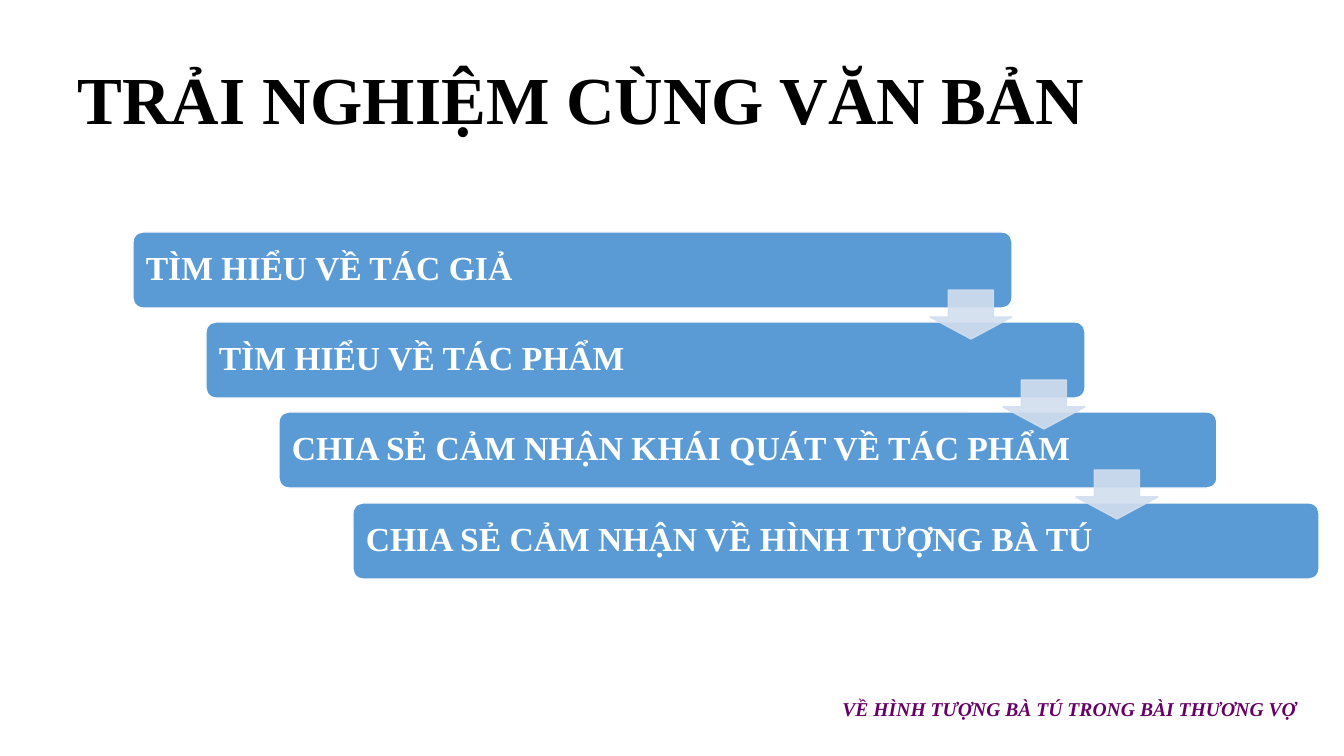
import pptx
import pptx.util
import pptx.dml.color
import pptx.enum.shapes
import pptx.enum.text
import pptx.oxml

TITLE = "TRẢI NGHIỆM CÙNG VĂN BẢN"
FOOTER = "VỀ HÌNH TƯỢNG BÀ TÚ TRONG BÀI THƯƠNG VỢ"
STEPS = [  # text, bar width in px
    ("TÌM HIỂU VỀ TÁC GIẢ", 879),
    ("TÌM HIỂU VỀ TÁC PHẨM", 879),
    ("CHIA SẺ CẢM NHẬN KHÁI QUÁT VỀ TÁC PHẨM", 938),
    ("CHIA SẺ CẢM NHẬN VỀ HÌNH TƯỢNG BÀ TÚ", 966),
]
FONT = "Times New Roman"
BLUE, PALE, WHITE, BLACK, PLUM = "5B9BD5", "D2DEEF", "FFFFFF", "000000", "660066"
BAR = (133, 232, 76)  # first left, first top, height
ARROW = (930, 290, 82, 49)  # first left, first top, width, height
SPAN = (220, 271)  # first bar to last bar, across and down
SHAPES = pptx.enum.shapes.MSO_SHAPE
ANCHOR = pptx.enum.text.MSO_ANCHOR
ALIGN = pptx.enum.text.PP_ALIGN
FIT = pptx.enum.text.MSO_AUTO_SIZE


def px(n):
    return pptx.util.Emu(round(n * 914400 / 100.8))


def hue(code):
    return pptx.dml.color.RGBColor.from_string(code)


def shift(n):
    """Offset of stair n, across and down."""
    return [span * n // (len(STEPS) - 1) for span in SPAN]


def write(frame, text, size, color, align, italic=False):
    para = frame.paragraphs[0]
    para.alignment = align
    run = para.add_run()
    run.text = text
    font = run.font
    font.name, font.size = FONT, pptx.util.Pt(size)
    font.bold, font.italic = True, italic
    font.color.rgb = hue(color)
    return para


def inset(frame, left, top, right, bottom):
    frame.margin_left, frame.margin_top = px(left), px(top)
    frame.margin_right, frame.margin_bottom = px(right), px(bottom)


def draw(slide, kind, box, fill, line, rates):
    shape = slide.shapes.add_shape(kind, *map(px, box))
    shape.shadow.inherit = False
    shape.fill.solid()
    shape.fill.fore_color.rgb = hue(fill)
    shape.line.color.rgb = hue(line)
    shape.line.width = pptx.util.Pt(1)
    for n, rate in enumerate(rates):
        shape.adjustments[n] = rate
    return shape


def fade(shape, share):
    """Set the opacity of fill and line, in percent."""
    for tint in shape.element.spPr.iter(pptx.oxml.ns.qn("a:srgbClr")):
        alpha = pptx.oxml.xmlchemy.OxmlElement("a:alpha")
        alpha.set("val", str(share * 1000))
        tint.append(alpha)


def add_bar(slide, n, text, width):
    left, top, height = BAR
    dx, dy = shift(n)
    bar = draw(slide, SHAPES.ROUNDED_RECTANGLE,
               (left + dx, top + dy, width, height), BLUE, WHITE, [0.13])
    frame = bar.text_frame
    frame.word_wrap = True
    frame.vertical_anchor = ANCHOR.MIDDLE
    inset(frame, 10, 10, 120, 10)
    write(frame, text, 24, WHITE, ALIGN.LEFT).line_spacing = 0.9


def add_arrow(slide, n):
    left, top, width, height = ARROW
    dx, dy = shift(n)
    arrow = draw(slide, SHAPES.DOWN_ARROW,
                 (left + dx, top + dy, width, height), PALE, PALE, [0.55, 0.45])
    fade(arrow, 90)


def add_title(slide):
    title = slide.shapes.title
    title.left, title.top, title.width, title.height = map(px, (49, 52, 1064, 65))
    frame = title.text_frame
    frame.word_wrap = True
    frame.auto_size = FIT.NONE
    frame.vertical_anchor = ANCHOR.TOP
    inset(frame, 10, 5, 10, 5)
    write(frame, TITLE, 48, BLACK, ALIGN.CENTER)


def add_footer(slide):
    box = slide.shapes.add_textbox(*map(px, (822, 692, 495, 34)))
    frame = box.text_frame
    frame.word_wrap = False
    frame.auto_size = FIT.SHAPE_TO_FIT_TEXT
    write(frame, FOOTER, 14, PLUM, ALIGN.CENTER, italic=True)


def main():
    deck = pptx.Presentation()
    deck.slide_width, deck.slide_height = px(1344), px(756)
    slide = deck.slides.add_slide(deck.slide_layouts[5])
    add_title(slide)
    for n, (text, width) in enumerate(STEPS):
        add_bar(slide, n, text, width)
    for n in range(len(STEPS) - 1):
        add_arrow(slide, n)
    add_footer(slide)
    deck.save("out.pptx")


if __name__ == "__main__":
    main()
